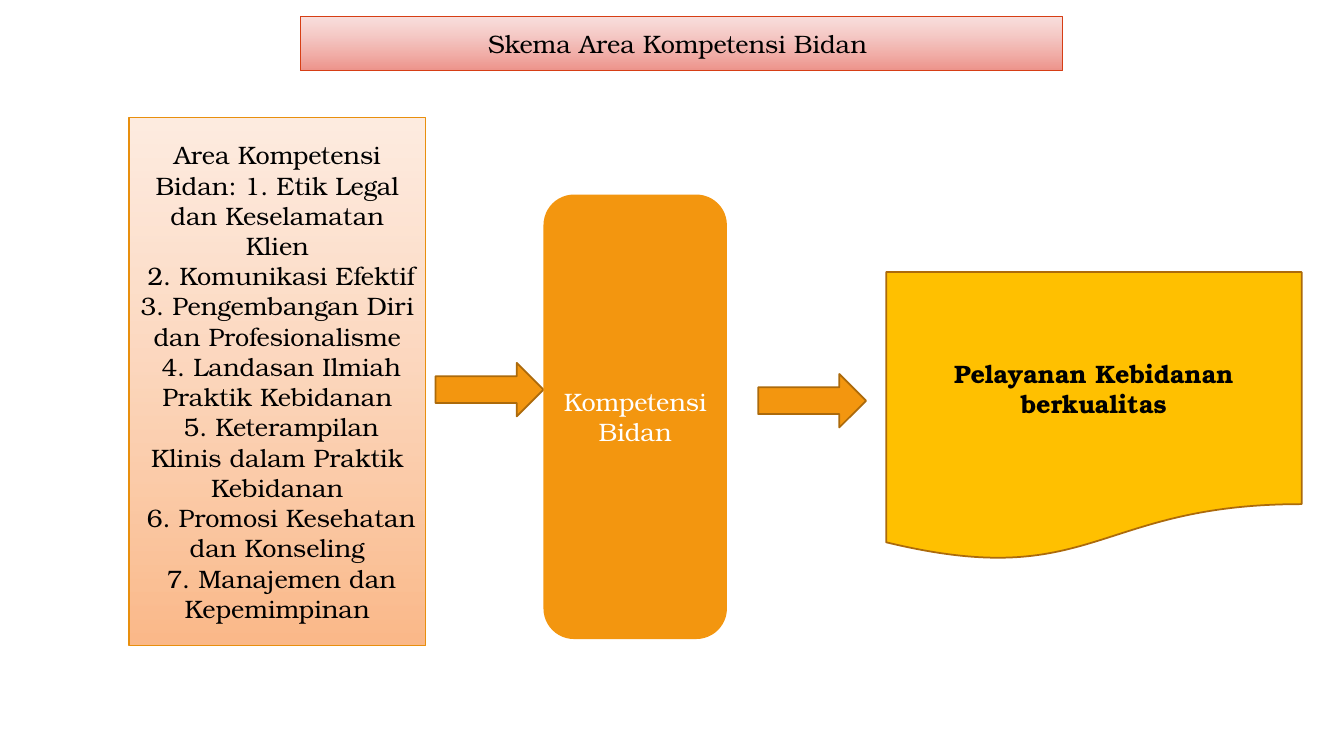
from lxml.etree import SubElement
from pptx import Presentation
from pptx.dml.color import RGBColor
from pptx.enum.shapes import MSO_SHAPE
from pptx.enum.text import MSO_ANCHOR, MSO_AUTO_SIZE, PP_ALIGN
from pptx.oxml.ns import qn
from pptx.util import Inches, Pt

FONT = "TeX Gyre Bonum"
COLORS = {
    "black": "000000", "white": "FFFFFF", "orange": "F3960F", "brown": "AC6A0B",
    "gold": "FFC000", "amber": "E88F0E", "red": "D63E15",
    "peach_light": "FDDFCC", "peach": "FBB37F",
    "rose_light": "F5CAC7", "rose": "EC8980",
}
GRADIENT_OPACITY = (60, 92)

TITLE = "Skema Area Kompetensi Bidan "
AREAS = [
    "Area Kompetensi Bidan: 1. Etik Legal dan Keselamatan Klien",
    " 2. Komunikasi Efektif ",
    "3. Pengembangan Diri dan Profesionalisme",
    " 4. Landasan Ilmiah Praktik Kebidanan",
    " 5. Keterampilan Klinis dalam Praktik Kebidanan",
    " 6. Promosi Kesehatan dan Konseling",
    " 7. Manajemen dan Kepemimpinan",
]
COMPETENCE = ["Kompetensi Bidan"]
SERVICE = ["Pelayanan Kebidanan berkualitas"]

# Left, top, width, height as percent of the slide
TITLE_BOX = (22.36, 2.13, 56.71, 7.2)
ARROW_SIZE = (8.03, 7.07)
CALLOUT_ADJUSTMENTS = (7600, 168900, 16670)

# Preset, box, fill (a pair is a gradient), line, line width, lines, text colour, bold
STEPS = [
    (MSO_SHAPE.RECTANGLE, (9.6, 15.6, 22.06, 69.73),
     ("peach_light", "peach"), "amber", 0.75, AREAS, "black", False),
    (MSO_SHAPE.RIGHT_ARROW, (32.41, 48, *ARROW_SIZE),
     "orange", "brown", 1.25, [], "black", False),
    (MSO_SHAPE.ROUNDED_RECTANGLE, (40.44, 25.73, 13.65, 58.8),
     "orange", None, 0, COMPETENCE, "white", False),
    (MSO_SHAPE.RIGHT_ARROW, (56.41, 49.47, *ARROW_SIZE),
     "orange", "brown", 1.25, [], "black", False),
    (MSO_SHAPE.FLOWCHART_DOCUMENT, (65.94, 36, 30.91, 38.27),
     "gold", "brown", 1.25, SERVICE, "black", True),
]


def rgb(name):
    return RGBColor.from_string(COLORS[name])


def place(box):
    """Turn percent of the slide into lengths."""
    sides = (deck.slide_width, deck.slide_height) * 2
    return [round(share * side / 100) for share, side in zip(box, sides)]


def paint(shape, fill, line, width):
    if isinstance(fill, tuple):
        shape.fill.gradient()
        shape.fill.gradient_angle = 270
        for stop, name, position in zip(shape.fill.gradient_stops, fill, (0, 1)):
            stop.color.rgb = rgb(name)
            stop.position = position
        tints = shape.element.spPr.iter(qn("a:srgbClr"))
        for tint, opacity in zip(tints, GRADIENT_OPACITY):
            SubElement(tint, qn("a:alpha"), val=str(opacity * 1000))
    else:
        shape.fill.solid()
        shape.fill.fore_color.rgb = rgb(fill)
    if line:
        shape.line.color.rgb = rgb(line)
        shape.line.width = Pt(width)
    else:
        shape.line.fill.background()


def write(shape, lines, color, bold):
    frame = shape.text_frame
    frame.text = "\n".join(lines)
    frame.word_wrap = True
    frame.auto_size = MSO_AUTO_SIZE.NONE
    frame.vertical_anchor = MSO_ANCHOR.MIDDLE
    for paragraph in frame.paragraphs:
        paragraph.alignment = PP_ALIGN.CENTER
        paragraph.font.name = FONT
        paragraph.font.size = Pt(18)
        paragraph.font.bold = bold
        paragraph.font.color.rgb = rgb(color)


def make_callout(shape):
    """Give the title placeholder a speech-bubble outline."""
    outline = SubElement(shape.element.spPr, qn("a:prstGeom"), prst="wedgeRoundRectCallout")
    guides = SubElement(outline, qn("a:avLst"))
    for number, value in enumerate(CALLOUT_ADJUSTMENTS, 1):
        SubElement(guides, qn("a:gd"), name=f"adj{number}", fmla=f"val {value}")


deck = Presentation()
deck.slide_width, deck.slide_height = Inches(13.33), Inches(7.5)
slide = deck.slides.add_slide(deck.slide_layouts[5])

title = slide.shapes.title
title.left, title.top, title.width, title.height = place(TITLE_BOX)
make_callout(title)
paint(title, ("rose_light", "rose"), "red", 0.75)
write(title, [TITLE], "black", False)

for preset, box, fill, line, width, lines, color, bold in STEPS:
    step = slide.shapes.add_shape(preset, *place(box))
    step.shadow.inherit = False
    paint(step, fill, line, width)
    if lines:
        write(step, lines, color, bold)

deck.save("out.pptx")
